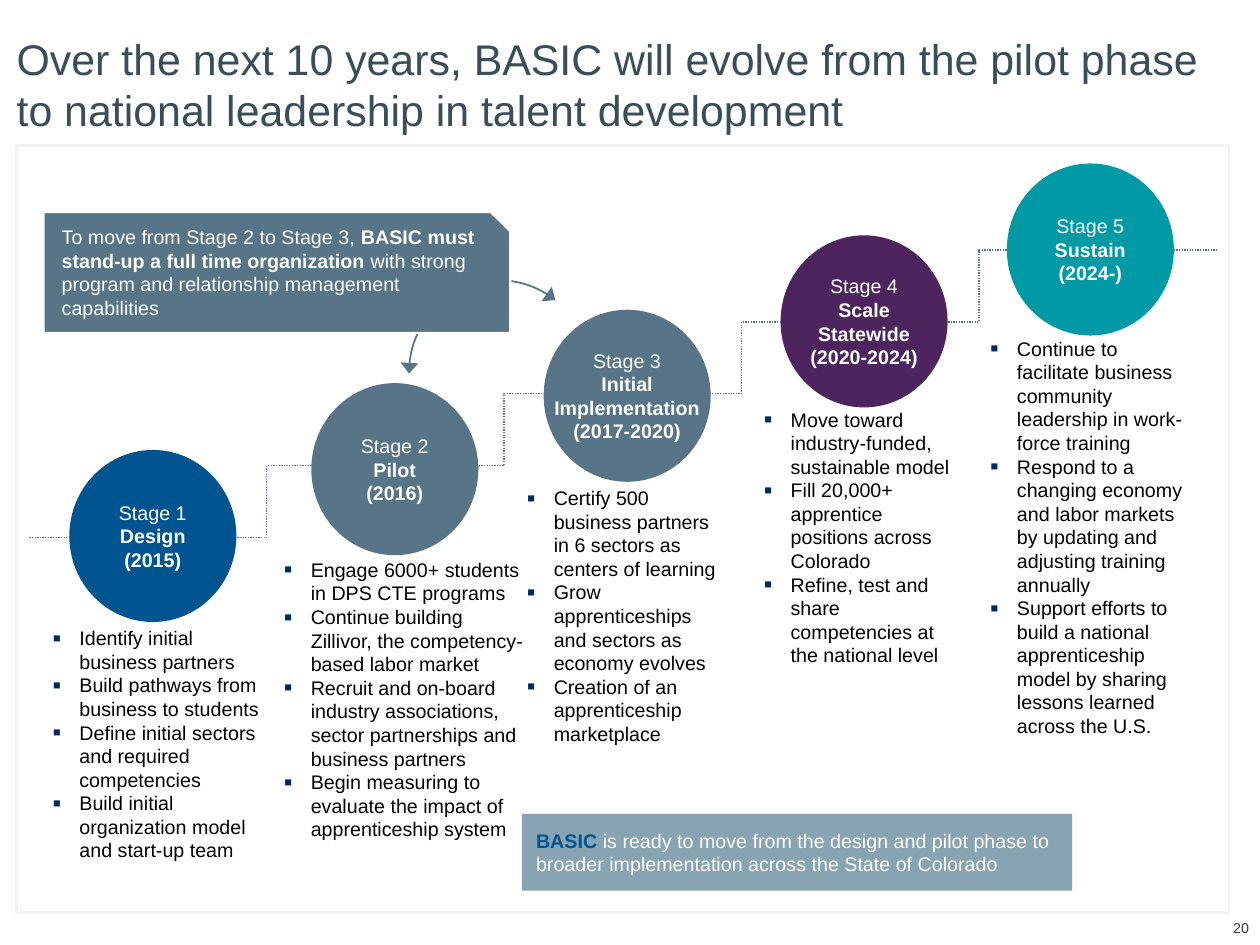
"""Build the slide on the five stages of BASIC, from pilot to national leadership."""
import pptx
import pptx.dml.color
import pptx.enum.dml
import pptx.enum.shapes
import pptx.enum.text
import pptx.oxml
import pptx.oxml.ns
import pptx.util
from lxml import etree

Cm = pptx.util.Cm
Pt = pptx.util.Pt
SHAPES = pptx.enum.shapes.MSO_SHAPE
ANCHOR = pptx.enum.text.MSO_ANCHOR
ALIGN = pptx.enum.text.PP_ALIGN
qn = pptx.oxml.ns.qn


class Theme:
    font = "Arial"
    title_size, body_size, number_size = 24, 11, 8
    title, body, number = "3A4E59", "000000", "3C3C3C"
    white, frame, bullet = "FFFFFF", "F2F2F2", "002960"
    blue, slate, purple, teal, mist = "005490", "577586", "4D245D", "009AA6", "7D9AAA"


def rgb(value):
    return pptx.dml.color.RGBColor.from_string(value)


def write(box, text, size=Theme.body_size, color=Theme.body, strong=None, align=ALIGN.LEFT,
          anchor=ANCHOR.TOP, margins=(0, 0, 0, 0), wrap=True, bullets=False):
    """Fill a box with text; ** marks bold, a list gives paragraphs."""
    frame = box.text_frame
    frame.word_wrap = wrap
    frame.vertical_anchor = anchor
    frame.margin_left, frame.margin_top, frame.margin_right, frame.margin_bottom = map(Cm, margins)
    for index, content in enumerate(text):
        para = frame.add_paragraph() if index else frame.paragraphs[0]
        para.alignment = align
        if bullets:
            properties = para._p.get_or_add_pPr()
            properties.set("marL", str(Cm(0.53)))
            properties.set("indent", str(Cm(-0.53)))
            tint = etree.SubElement(properties, qn("a:buClr"))
            etree.SubElement(tint, qn("a:srgbClr"), val=Theme.bullet)
            etree.SubElement(properties, qn("a:buSzPct"), val="125000")
            etree.SubElement(properties, qn("a:buFont"), typeface=Theme.font)
            etree.SubElement(properties, qn("a:buChar"), char="▪")
        for part, piece in enumerate(content.split("**")):
            bold = part % 2 == 1
            for row, line in enumerate(piece.split("\n")):
                if row:
                    para.add_line_break()
                if line:
                    span = para.add_run()
                    span.text = line
                    span.font.name = Theme.font
                    span.font.size = Pt(size)
                    span.font.bold = bold
                    span.font.color.rgb = rgb(strong if bold and strong else color)


deck = pptx.Presentation()
deck.slide_width, deck.slide_height = Cm(24.89), Cm(18.67)
page = deck.slides.add_slide(deck.slide_layouts[6])
shapes = page.shapes

number = shapes.add_textbox(Cm(24.36), Cm(18.16), Cm(0.36), Cm(0.33))
write(number, ["20"], size=Theme.number_size, color=Theme.number, anchor=ANCHOR.MIDDLE, wrap=False)

panel = shapes.add_shape(SHAPES.RECTANGLE, Cm(0.33), Cm(2.87), Cm(23.95), Cm(15.16))
panel.shadow.inherit = False
panel.fill.solid()
panel.fill.fore_color.rgb = rgb(Theme.white)
panel.line.color.rgb = rgb(Theme.frame)
panel.line.width = Pt(1.5)

title = shapes.add_textbox(Cm(0.33), Cm(0.64), Cm(23.95), Cm(2.06))
write(title, ["Over the next 10 years, BASIC will evolve from the pilot phase "
              "to national leadership in talent development"],
      size=Theme.title_size, color=Theme.title)

summary = shapes.add_shape(SHAPES.RECTANGLE, Cm(10.31), Cm(16.08), Cm(10.87), Cm(1.52))
summary.shadow.inherit = False
summary.fill.solid()
summary.fill.fore_color.rgb = rgb(Theme.mist)
tint = summary.fill._xPr.find(qn("a:solidFill")).find(qn("a:srgbClr"))
etree.SubElement(tint, qn("a:alpha"), val="91000")
summary.line.fill.background()
write(summary, ["**BASIC** is ready to move from the design and pilot phase to\n"
                "broader implementation across the State of Colorado"],
      color=Theme.white, strong=Theme.blue, anchor=ANCHOR.MIDDLE,
      margins=(0.28, 0.28, 0.28, 0.28), wrap=False)

arc = shapes.add_shape(SHAPES.ARC, Cm(8.08), Cm(5.54), Cm(3.58), Cm(3.68))
arc.shadow.inherit = False
arc.adjustments[0], arc.adjustments[1] = 108, 184.33
arc.fill.background()
arc.line.color.rgb = rgb(Theme.slate)
arc.line.width = Pt(1)
for end in ("a:headEnd", "a:tailEnd"):
    etree.SubElement(arc.line._get_or_add_ln(), qn(end), type="triangle", w="lg", len="med")

stair_left, stair_top, tread, riser = 0.58, 10.62, 4.69, 1.42
corners = []
for step in range(5):
    level = Cm(stair_top - step * riser)
    corners += [(Cm(stair_left + (step + side) * tread), level) for side in (0, 1)]
builder = shapes.build_freeform(*corners[0], scale=1.0)
builder.add_line_segments(corners[1:], close=False)
stairs = builder.convert_to_shape()
stairs.shadow.inherit = False
stairs.fill.background()
stairs.line.color.rgb = rgb(Theme.slate)
stairs.line.width = Pt(0.75)
stairs.line.dash_style = pptx.enum.dml.MSO_LINE.ROUND_DOT

stages = [
    ("Stage 1\n**Design**", "**(2015)**", Theme.blue, (1.37, 8.89), (1.04, 12.37, 4.17, 4.7), [
        "Identify initial business partners",
        "Build pathways from business to students",
        "Define initial sectors and required competencies",
        "Build initial organization model and start-up team"]),
    ("Stage 2\n**Pilot**", "**(2016)**", Theme.slate, (6.15, 7.57), (5.61, 11.02, 4.8, 6.12), [
        "Engage 6000+ students in DPS CTE programs",
        "Continue building Zillivor, the competency-based labor market",
        "Recruit and on-board industry associations, sector partnerships and business partners",
        "Begin measuring to evaluate the impact of apprenticeship system"]),
    ("Stage 3\n**Initial\nImplementation**", "**(2017-2020)**", Theme.slate, (10.74, 6.12),
     (10.41, 9.6, 3.99, 5.64), [
        "Certify 500 business partners in 6 sectors as centers of learning",
        "Grow apprenticeships and sectors as economy evolves",
        "Creation of an apprenticeship marketplace"]),
    ("Stage 4\n**Scale\nStatewide**", "**(2020-2024)**", Theme.purple, (15.42, 4.65),
     (15.09, 8.05, 3.99, 5.23), [
        "Move toward industry-funded, sustainable model",
        "Fill 20,000+ apprentice positions across Colorado",
        "Refine, test and share competencies at the national level"]),
    ("Stage 5\n**Sustain**", "**(2024-)**", Theme.teal, (19.89, 3.23), (19.56, 6.65, 3.99, 8), [
        "Continue to facilitate business community leadership in work-force training",
        "Respond to a changing economy and labor markets by updating and adjusting "
        "training annually",
        "Support efforts to build a national apprenticeship model by sharing lessons "
        "learned across the U.S."]),
]
for name, years, color, corner, area, goals in stages:
    circle = shapes.add_shape(SHAPES.OVAL, *map(Cm, corner), Cm(3.3), Cm(3.4))
    circle.shadow.inherit = False
    circle.fill.solid()
    circle.fill.fore_color.rgb = rgb(color)
    circle.line.fill.background()
    write(circle, [name, years], color=Theme.white, align=ALIGN.CENTER,
          anchor=ANCHOR.MIDDLE, wrap=False)
    write(shapes.add_textbox(*map(Cm, area)), goals, bullets=True)

callout = shapes.add_shape(SHAPES.SNIP_1_RECTANGLE, Cm(0.86), Cm(4.19), Cm(9.22), Cm(2.39))
callout.shadow.inherit = False
callout.adjustments[0] = 0.16
callout.fill.solid()
callout.fill.fore_color.rgb = rgb(Theme.slate)
callout.line.color.rgb = rgb(Theme.white)
callout.line.width = Pt(1.25)
write(callout, ["To move from Stage 2 to Stage 3, **BASIC must stand-up a full time organization** "
                "with strong program and relationship management capabilities"],
      color=Theme.white, anchor=ANCHOR.MIDDLE, margins=(0.36, 0, 0.28, 0.2))

deck.save("out.pptx")
